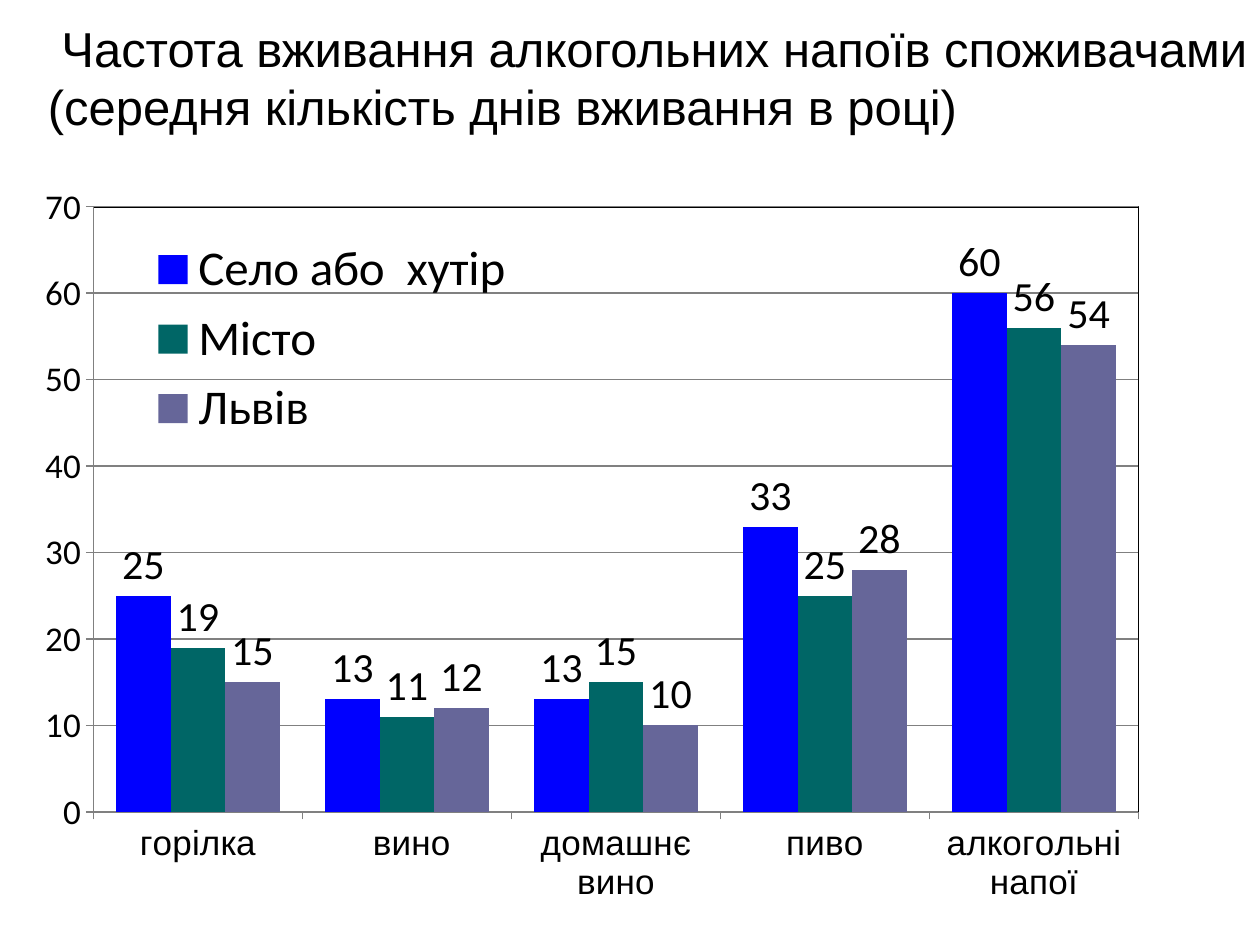
from pptx import Presentation
from pptx.chart.data import CategoryChartData
from pptx.dml.color import RGBColor
from pptx.enum.chart import XL_CHART_TYPE, XL_LABEL_POSITION, XL_LEGEND_POSITION, XL_TICK_MARK
from pptx.enum.text import MSO_ANCHOR, MSO_AUTO_SIZE, PP_ALIGN
from pptx.oxml import parse_xml
from pptx.oxml.ns import nsdecls, qn
from pptx.util import Inches, Pt

BLACK = RGBColor(0x00, 0x00, 0x00)
GREY = RGBColor(0x80, 0x80, 0x80)
BLUE = RGBColor(0x00, 0x00, 0xFF)
TEAL = RGBColor(0x00, 0x66, 0x66)
VIOLET = RGBColor(0x66, 0x66, 0x99)

TITLE = " Частота вживання алкогольних напоїв споживачами (середня кількість днів вживання в році)"
DRINKS = ["горілка", " вино", "домашнє вино", "пиво", "алкогольні напої"]
PLACES = [
    ("Село або  хутір", (25, 13, 13, 33, 60), BLUE),
    ("Місто", (19, 11, 15, 25, 56), TEAL),
    ("Львів", (15, 12, 10, 28, 54), VIOLET),
]


def apply_format(target, **values):
    """Set each given attribute on the target."""
    for name, value in values.items():
        setattr(target, name, value)


def format_font(font, size, family):
    """Give a font its size and family, in plain black."""
    apply_format(font, size=Pt(size), name=family, bold=False)
    font.color.rgb = BLACK


def manual_layout(x, y, w, h, inner=False):
    """Return a chart layout element for a box in fractions of the chart."""
    target = '<c:layoutTarget val="inner"/>' if inner else ""
    edges = '<c:xMode val="edge"/><c:yMode val="edge"/>'
    box = "".join(f'<c:{key} val="{value}"/>' for key, value in zip("xywh", (x, y, w, h)))
    return parse_xml(
        f'<c:layout {nsdecls("c")}><c:manualLayout>{target}{edges}{box}</c:manualLayout></c:layout>'
    )


def add_title(slide, left, top, width, height):
    """Place and format the slide title."""
    title = slide.shapes.title
    apply_format(title, left=left, top=top, width=width, height=height)
    frame = title.text_frame
    apply_format(frame, text=TITLE, word_wrap=True, auto_size=MSO_AUTO_SIZE.NONE,
                 vertical_anchor=MSO_ANCHOR.MIDDLE)
    heading = frame.paragraphs[0]
    heading.alignment = PP_ALIGN.LEFT
    format_font(heading.runs[0].font, 28, "Arial")


def format_axes(chart):
    """Format the drink axis and the scale of days."""
    for axis, family in ((chart.category_axis, "Arial"), (chart.value_axis, "Calibri")):
        apply_format(axis, major_tick_mark=XL_TICK_MARK.OUTSIDE, minor_tick_mark=XL_TICK_MARK.NONE)
        format_font(axis.tick_labels.font, 20, family)
        axis.format.line.color.rgb = GREY
    days = chart.value_axis
    apply_format(days, minimum_scale=0, maximum_scale=70, major_unit=10, has_major_gridlines=True)
    days.major_gridlines.format.line.color.rgb = GREY


def format_plot_area(chart):
    """Position the plot area and outline it in black."""
    area = chart.plots[0]._element.getparent()
    for layout in area.findall(qn("c:layout")):
        area.remove(layout)
    area.insert(0, manual_layout(0.042, 0.028, 0.89, 0.854, inner=True))
    area.append(parse_xml(
        f'<c:spPr {nsdecls("c", "a")}><a:noFill/><a:ln w="12700"><a:solidFill>'
        f'<a:srgbClr val="{BLACK}"/></a:solidFill></a:ln></c:spPr>'
    ))


def format_legend(chart):
    """Stack the legend inside the upper left of the plot area."""
    chart.has_legend = True
    legend = chart.legend
    apply_format(legend, position=XL_LEGEND_POSITION.TOP, include_in_layout=False)
    format_font(legend.font, 28, "Calibri")
    element = legend._element
    for layout in element.findall(qn("c:layout")):
        element.remove(layout)
    element.find(qn("c:legendPos")).addnext(manual_layout(0.09, 0.06, 0.31, 0.31))


def add_frequency_chart(slide, left, top, width, height):
    """Add the clustered columns of drinking days by place."""
    data = CategoryChartData()
    data.categories = DRINKS
    for place, days, _ in PLACES:
        data.add_series(place, days)
    chart = slide.shapes.add_chart(
        XL_CHART_TYPE.COLUMN_CLUSTERED, left, top, width, height, data
    ).chart
    chart.has_title = False
    format_font(chart.font, 18, "Calibri")
    columns = chart.plots[0]
    apply_format(columns, gap_width=83, overlap=0, vary_by_categories=False)
    for series, (_, _, color) in zip(columns.series, PLACES):
        series.format.fill.solid()
        series.format.fill.fore_color.rgb = color
        labels = series.data_labels
        apply_format(labels, show_value=True, position=XL_LABEL_POSITION.OUTSIDE_END)
        format_font(labels.font, 24, "Calibri")
    format_axes(chart)
    format_plot_area(chart)
    format_legend(chart)


def main():
    """Build and save the slide."""
    deck = Presentation()
    apply_format(deck, slide_width=Inches(10), slide_height=Inches(7.5))
    slide = deck.slides.add_slide(deck.slide_layouts[5])
    add_title(slide, Inches(0.28), Inches(0.06), Inches(9.84), Inches(1.1))
    add_frequency_chart(slide, Inches(0.35), Inches(1.47), Inches(9.32), Inches(5.69))
    deck.save("out.pptx")


if __name__ == "__main__":
    main()
